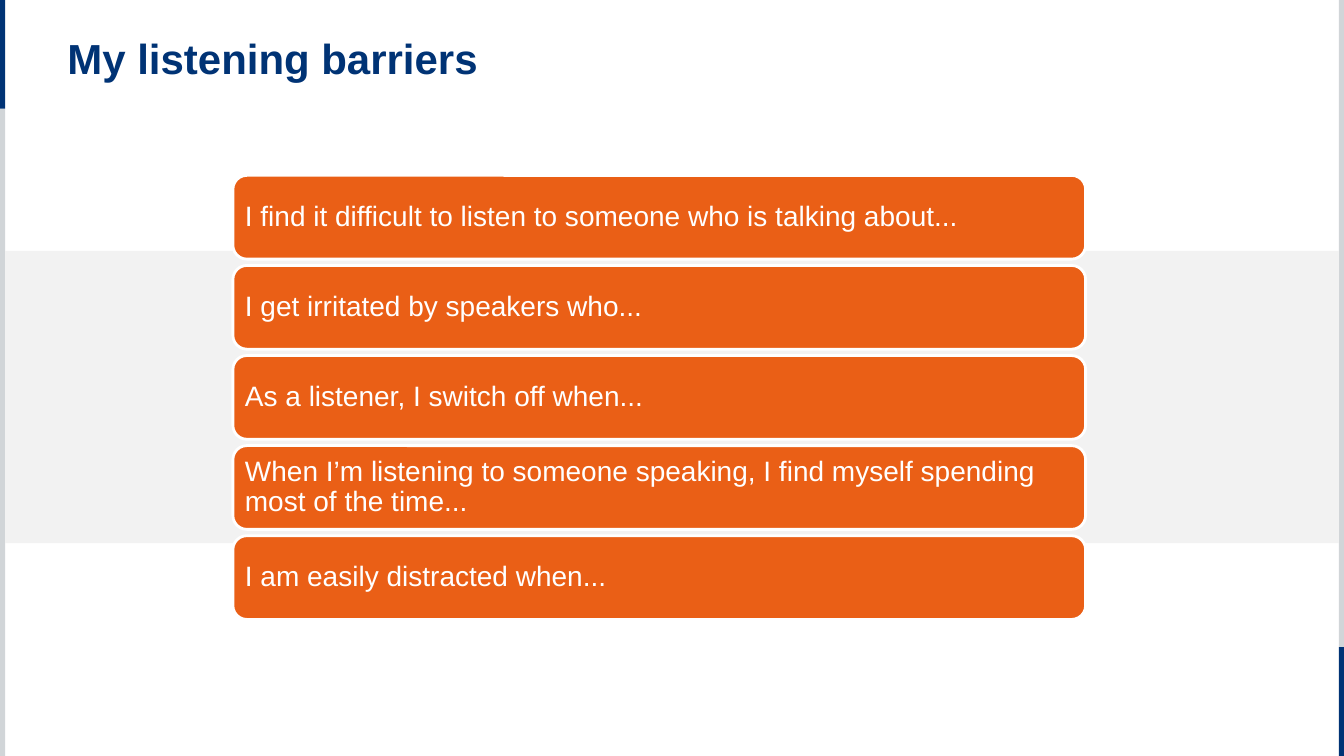
from pptx import Presentation
from pptx.dml.color import RGBColor
from pptx.enum.shapes import MSO_SHAPE as Shape
from pptx.enum.text import MSO_ANCHOR as Anchor, PP_ALIGN as Align
from pptx.util import Cm, Pt

NAVY = RGBColor(0x00, 0x33, 0x75)
GREY = RGBColor(0xD1, 0xD5, 0xD8)
PALE = RGBColor(0xF2, 0xF2, 0xF2)
ORANGE = RGBColor(0xEA, 0x5F, 0x16)
WHITE = RGBColor(0xFF, 0xFF, 0xFF)

SLIDE_WIDTH, SLIDE_HEIGHT = 33.87, 19.05
EDGE_WIDTH = 0.13
ACCENT_HEIGHT = 2.74

BARRIERS = [
    "I find it difficult to listen to someone who is talking about...",
    "I get irritated by speakers who...",
    "As a listener, I switch off when...",
    "When I’m listening to someone speaking, I find myself spending most of the time...",
    "I am easily distracted when...",
]


def add_block(slide, kind, left, top, width, height, color):
    shape = slide.shapes.add_shape(kind, Cm(left), Cm(top), Cm(width), Cm(height))
    shape.shadow.inherit = False
    shape.fill.solid()
    shape.fill.fore_color.rgb = color
    shape.line.fill.background()
    return shape


def write_text(frame, text, size, color, anchor, inset, bold=False):
    frame.word_wrap = True
    frame.vertical_anchor = anchor
    frame.margin_left = frame.margin_right = Cm(inset)
    frame.margin_top = frame.margin_bottom = Cm(inset)
    paragraph = frame.paragraphs[0]
    paragraph.alignment = Align.LEFT
    paragraph.line_spacing = 0.9
    paragraph.space_before = Pt(0)
    run = paragraph.add_run()
    run.text = text
    run.font.name = "Arial"
    run.font.size = Pt(size)
    run.font.bold = bold
    run.font.color.rgb = color
    return paragraph


def add_edge(slide, left, top, width, height, accent_on_top):
    plain_height = height - ACCENT_HEIGHT
    accent_top = top if accent_on_top else top + plain_height
    plain_top = top + ACCENT_HEIGHT if accent_on_top else top
    add_block(slide, Shape.RECTANGLE, left, plain_top, width, plain_height, GREY)
    add_block(slide, Shape.RECTANGLE, left, accent_top, width, ACCENT_HEIGHT, NAVY)


def add_background(slide, width, height):
    right = width - EDGE_WIDTH
    add_edge(slide, right, 0, EDGE_WIDTH, height, accent_on_top=False)
    add_edge(slide, 0, 0, EDGE_WIDTH, height, accent_on_top=True)
    add_block(slide, Shape.RECTANGLE, EDGE_WIDTH, 6.32, right - EDGE_WIDTH, 7.37, PALE)


def add_title(slide, left, top, width, height, text):
    title = slide.shapes.title
    title.left, title.top = Cm(left), Cm(top)
    title.width, title.height = Cm(width), Cm(height)
    write_text(title.text_frame, text, 30, NAVY, Anchor.TOP, 0, bold=True)


def add_barriers(slide, left, top, width, height, barriers):
    gap = 0.16
    bar_height = (height - gap * (len(barriers) - 1)) / len(barriers)
    for index, barrier in enumerate(barriers):
        bar_top = top + index * (bar_height + gap)
        bar = add_block(slide, Shape.ROUNDED_RECTANGLE, left, bar_top, width, bar_height, ORANGE)
        bar.line.color.rgb = WHITE
        bar.line.width = Pt(2)
        paragraph = write_text(bar.text_frame, barrier, 20, WHITE, Anchor.MIDDLE, 0.2)
        paragraph.space_after = Pt(7)


def main():
    presentation = Presentation()
    presentation.slide_width = Cm(SLIDE_WIDTH)
    presentation.slide_height = Cm(SLIDE_HEIGHT)
    slide = presentation.slides.add_slide(presentation.slide_layouts[5])
    add_background(slide, SLIDE_WIDTH, SLIDE_HEIGHT)
    add_title(slide, 1.7, 0.97, 29.85, 1.42, "My listening barriers")
    add_barriers(slide, 5.87, 4.42, 21.49, 11.19, BARRIERS)
    presentation.save("out.pptx")


if __name__ == "__main__":
    main()
